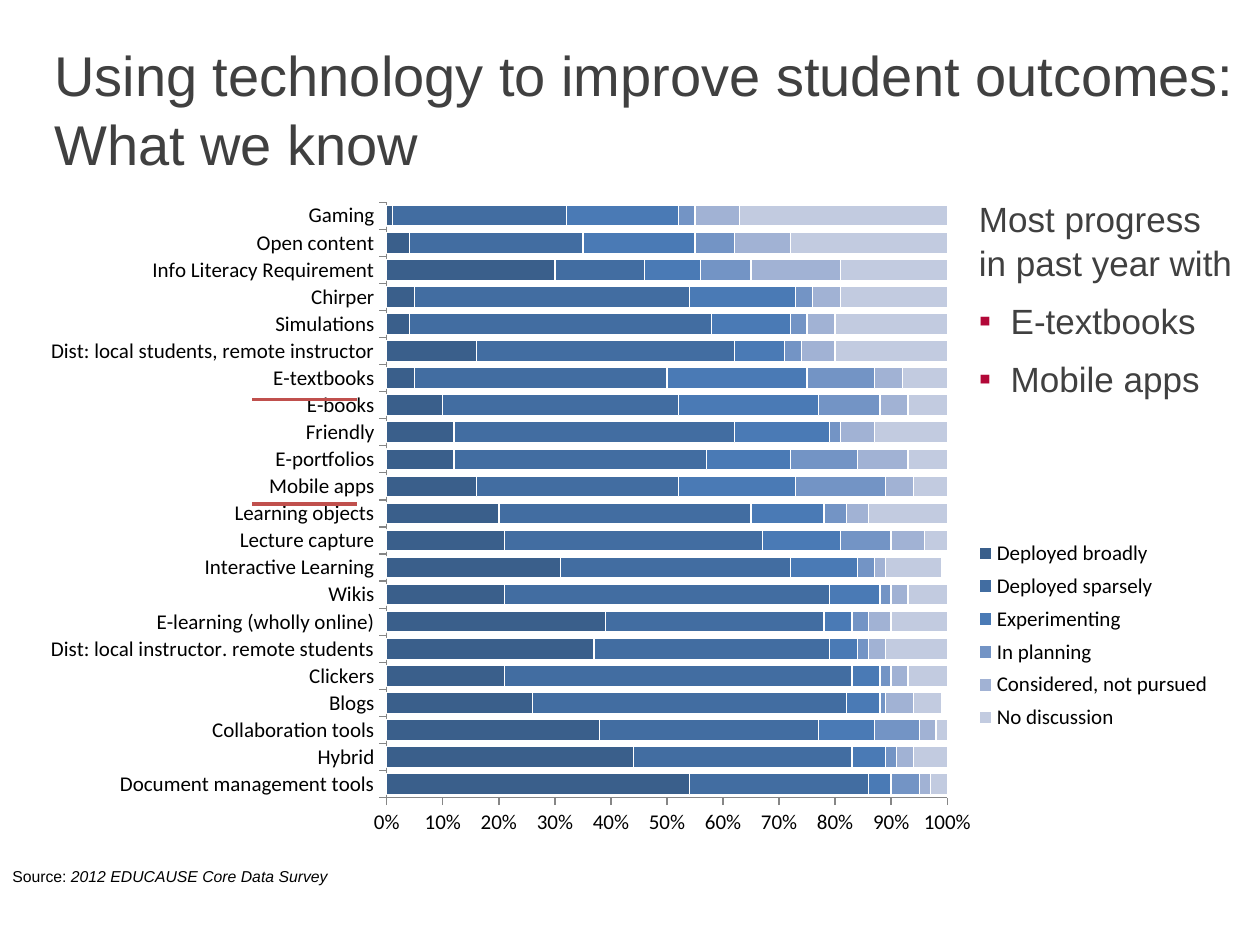
from dataclasses import dataclass

from lxml import etree
from pptx import Presentation
from pptx import util as u
from pptx.chart.data import CategoryChartData
from pptx.dml.color import RGBColor
from pptx.enum import chart as ch, shapes, text
from pptx.oxml import parse_xml
from pptx.oxml.ns import nsdecls, qn


@dataclass(frozen=True)
class Theme:
    font: str = "Arial"
    chart_font: str = "Calibri"
    text: str = "404040"
    black: str = "000000"
    white: str = "FFFFFF"
    bullet: str = "B20838"
    mark: str = "C0504D"
    axis: str = "868686"
    title_size: int = 32
    body_size: int = 20
    chart_size: int = 12
    source_size: int = 9


@dataclass(frozen=True)
class Box:
    """Position and size in centimetres."""
    left: float
    top: float
    width: float
    height: float

    def lengths(self) -> tuple:
        return tuple(u.Cm(v) for v in (self.left, self.top, self.width, self.height))


@dataclass(frozen=True)
class Stage:
    name: str
    color: str
    shares: tuple


THEME = Theme()

TECHNOLOGIES = (
    "Document management tools", "Hybrid", "Collaboration tools", "Blogs", "Clickers",
    "Dist: local instructor. remote students", "E-learning (wholly online)", "Wikis",
    "Interactive Learning", "Lecture capture", "Learning objects", "Mobile apps",
    "E-portfolios", "Friendly", "E-books", "E-textbooks",
    "Dist: local students, remote instructor", "Simulations", "Chirper",
    "Info Literacy Requirement", "Open content", "Gaming",
)

STAGES = (
    Stage("Deployed broadly", "3A5F8B",
          (.54, .44, .38, .26, .21, .37, .39, .21, .31, .21, .2,
           .16, .12, .12, .1, .05, .16, .04, .05, .3, .04, .01)),
    Stage("Deployed sparsely", "426DA1",
          (.32, .39, .39, .56, .62, .42, .39, .58, .41, .46, .45,
           .36, .45, .5, .42, .45, .46, .54, .49, .16, .31, .31)),
    Stage("Experimenting", "4A7AB5",
          (.04, .06, .1, .06, .05, .05, .05, .09, .12, .14, .13,
           .21, .15, .17, .25, .25, .09, .14, .19, .1, .2, .2)),
    Stage("In planning", "7394C5",
          (.05, .02, .08, .01, .02, .02, .03, .02, .03, .09, .04,
           .16, .12, .02, .11, .12, .03, .03, .03, .09, .07, .03)),
    Stage("Considered, not pursued", "A1B2D4",
          (.02, .03, .03, .05, .03, .03, .04, .03, .02, .06, .04,
           .05, .09, .06, .05, .05, .06, .05, .05, .16, .1, .08)),
    Stage("No discussion", "C2CBE0",
          (.03, .06, .03, .05, .07, .11, .11, .07, .1, .05, .15,
           .06, .07, .14, .07, .08, .2, .2, .2, .2, .28, .37)),
)


def rgb(value: str) -> RGBColor:
    return RGBColor.from_string(value)


def style(font, size: int, color: str, name: str = THEME.font) -> None:
    font.name, font.size = name, u.Pt(size)
    font.color.rgb = rgb(color)


def place(shape, box: Box) -> None:
    shape.left, shape.top, shape.width, shape.height = box.lengths()


def set_bullet(paragraph, char: str = "") -> None:
    """Give the paragraph a hanging bullet, or none at all."""
    props = paragraph._p.get_or_add_pPr()
    hang = u.Cm(0.64) if char else 0
    props.set("marL", str(hang))
    props.set("indent", str(-hang))
    if not char:
        etree.SubElement(props, qn("a:buNone"))
        return
    color = etree.SubElement(props, qn("a:buClr"))
    etree.SubElement(color, qn("a:srgbClr")).set("val", THEME.bullet)
    etree.SubElement(props, qn("a:buFont")).set("typeface", THEME.font)
    etree.SubElement(props, qn("a:buChar")).set("char", char)


def set_layout(parent, target: str, x: float, y: float, w: float, h: float) -> None:
    """Fix the place of a chart part as fractions of the chart area."""
    inner = '<c:layoutTarget val="inner"/>' if target == "inner" else ""
    sizes = "".join(f'<c:{key} val="{val}"/>' for key, val in zip("xywh", (x, y, w, h)))
    layout = parse_xml(
        f'<c:layout {nsdecls("c")}><c:manualLayout>{inner}<c:xMode val="edge"/>'
        f'<c:yMode val="edge"/>{sizes}</c:manualLayout></c:layout>')
    for old in parent.findall(qn("c:layout")):
        parent.remove(old)
    parent.insert(0 if target == "inner" else 1, layout)


def add_title(slide) -> None:
    title = slide.shapes.title
    place(title, Box(0.84, 0.64, 24.77, 2.74))
    frame = title.text_frame
    frame.text = "Using technology to improve student outcomes: What we know"
    frame.auto_size = text.MSO_AUTO_SIZE.NONE
    frame.vertical_anchor = text.MSO_ANCHOR.TOP
    heading = frame.paragraphs[0]
    heading.alignment = text.PP_ALIGN.LEFT
    heading.line_spacing = 1.03
    style(heading.font, THEME.title_size, THEME.text)


def add_progress_list(slide) -> None:
    progress = slide.placeholders[1]
    place(progress, Box(19.48, 3.81, 5.72, 6.55))
    frame = progress.text_frame
    frame.text = "Most progress in past year with\nE-textbooks\nMobile apps"
    frame.auto_size = text.MSO_AUTO_SIZE.NONE
    frame.margin_right = u.Cm(0.3)
    for index, item in enumerate(frame.paragraphs):
        set_bullet(item, "▪" if index else "")
        item.line_spacing = 1.05
        item.space_before, item.space_after = u.Pt(0), u.Pt(8)
        style(item.font, THEME.body_size, THEME.text)


def add_adoption_chart(slide) -> None:
    data = CategoryChartData(number_format="0%")
    data.categories = TECHNOLOGIES
    for stage in STAGES:
        data.add_series(stage.name, stage.shares)
    chart = slide.shapes.add_chart(ch.XL_CHART_TYPE.BAR_STACKED,
                                   *Box(0.43, 3.81, 24.56, 13.34).lengths(), data).chart
    style(chart.font, THEME.chart_size, THEME.black, THEME.chart_font)
    chart.has_title = False

    # Bars
    plot = chart.plots[0]
    plot.gap_width, plot.overlap, plot.vary_by_categories = 30, 100, False
    for stage, series in zip(STAGES, plot.series):
        series.format.fill.solid()
        series.format.fill.fore_color.rgb = rgb(stage.color)
        series.format.line.color.rgb = rgb(THEME.white)
        series.format.line.width = u.Pt(0.75)

    # Axes
    for axis in (chart.category_axis, chart.value_axis):
        axis.has_major_gridlines = False
        axis.major_tick_mark = ch.XL_TICK_MARK.OUTSIDE
        axis.format.line.color.rgb = rgb(THEME.axis)
        style(axis.tick_labels.font, THEME.chart_size, THEME.black, THEME.chart_font)
    scale = chart.value_axis
    scale.minimum_scale, scale.maximum_scale, scale.major_unit = 0, 1, 0.1
    scale.tick_labels.number_format = "0%"
    scale.tick_labels.number_format_is_linked = False

    # Legend and plot placement
    chart.has_legend = True
    legend = chart.legend
    legend.position = ch.XL_LEGEND_POSITION.RIGHT
    legend.include_in_layout = False
    style(legend.font, THEME.chart_size, THEME.black, THEME.chart_font)
    set_layout(legend._element, "legend", 0.78, 0.52, 0.2, 0.31)
    set_layout(chart._chartSpace.chart.plotArea, "inner", 0.3, 0.02, 0.46, 0.9)


def add_source(slide) -> None:
    frame = slide.shapes.add_textbox(*Box(0, 17.35, 23.93, 0.64).lengths()).text_frame
    frame.word_wrap = True
    source = frame.paragraphs[0]
    source.add_run().text = "Source: "
    survey = source.add_run()
    survey.text = "2012 EDUCAUSE Core Data Survey"
    survey.font.italic = True
    style(source.font, THEME.source_size, THEME.black)


def add_underline(slide, top: float) -> None:
    mark = slide.shapes.add_connector(shapes.MSO_CONNECTOR.STRAIGHT, u.Cm(5.08), u.Cm(top),
                                      u.Cm(7.2), u.Cm(top))
    mark.line.color.rgb = rgb(THEME.mark)
    mark.line.width = u.Pt(2)
    etree.SubElement(mark._element.spPr, qn("a:effectLst"))


def main() -> None:
    deck = Presentation()
    deck.slide_width, deck.slide_height = u.Cm(25.4), u.Cm(19.05)
    slide = deck.slides.add_slide(deck.slide_layouts[1])
    add_title(slide)
    add_progress_list(slide)
    add_adoption_chart(slide)
    add_source(slide)
    for top in (8.05, 10.16):  # under E-textbooks and Mobile apps
        add_underline(slide, top)
    deck.save("out.pptx")


if __name__ == "__main__":
    main()
